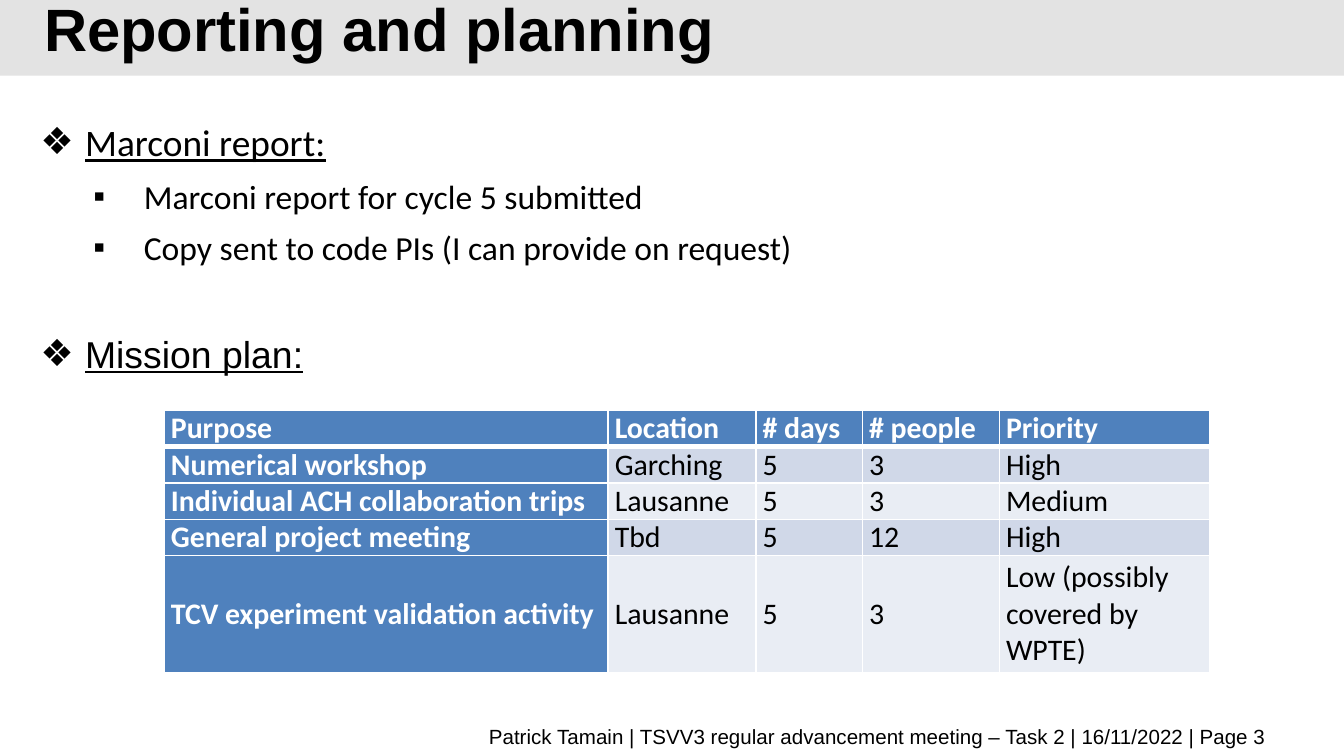
from lxml import etree
from pptx import Presentation
from pptx import util as u
from pptx.dml.color import RGBColor
from pptx.enum import shapes, text
from pptx.oxml.ns import qn

COLORS = {
    "black": "000000", "white": "FFFFFF", "banner": "E3E3E3",
    "blue": "4F81BD", "band_dark": "D0D8E8", "band_light": "E9EDF4",
}
BULLETS = {1: ("❖", 24, 20), 2: ("▪", 55.5, 18)}
POINTS = [
    (1, "Marconi report:", "Calibri", 0),
    (2, "Marconi report for cycle 5 submitted", "Calibri", 6),
    (2, "Copy sent to code PIs (I can provide on request)", "Calibri", 6),
    (1, "Mission plan:", "Arial", 34),
]
MISSIONS = [
    ("Purpose", "Location", "# days", "# people", "Priority"),
    ("Numerical workshop", "Garching", "5", "3", "High"),
    ("Individual ACH collaboration trips", "Lausanne", "5", "3", "Medium"),
    ("General project meeting", "Tbd", "5", "12", "High"),
    ("TCV experiment validation activity", "Lausanne", "5", "3",
     "Low (possibly covered by WPTE)"),
]
COL_WIDTHS = [237.8, 79.2, 57, 73.4, 113]
ROW_HEIGHTS = [19.5] * 4 + [62.5]


def rgb(name):
    return RGBColor.from_string(COLORS[name])


class Deck:
    def __init__(self, width, height):
        self.prs = Presentation()
        self.prs.slide_width, self.prs.slide_height = u.Pt(width), u.Pt(height)
        self.s = self.prs.slides.add_slide(self.prs.slide_layouts[6])

    def rect(self, box, color):
        sp = self.s.shapes.add_shape(shapes.MSO_SHAPE.RECTANGLE, *map(u.Pt, box))
        sp.shadow.inherit = False
        sp.fill.solid()
        sp.fill.fore_color.rgb = rgb(color)
        sp.line.fill.background()

    def run(self, p, words, size, font="Arial", color="black", bold=False, underline=False):
        r = p.add_run()
        r.text = words
        r.font.size, r.font.name = u.Pt(size), font
        r.font.bold, r.font.underline = bold, underline
        r.font.color.rgb = rgb(color)

    def frame(self, box, anchor):
        tf = self.s.shapes.add_textbox(*map(u.Pt, box)).text_frame
        tf.word_wrap = True
        tf.vertical_anchor = anchor
        return tf

    def label(self, box, words, size, align, bold=False, leading=None):
        p = self.frame(box, text.MSO_ANCHOR.MIDDLE).paragraphs[0]
        p.alignment = align
        if leading:
            p.line_spacing = u.Pt(leading)
        self.run(p, words, size, bold=bold)

    def bullets(self, box, points):
        tf = self.frame(box, text.MSO_ANCHOR.TOP)
        for i, (level, words, font, before) in enumerate(points):
            p = tf.add_paragraph() if i else tf.paragraphs[0]
            char, margin, size = BULLETS[level]
            p.level = level - 1
            pPr = p._p.get_or_add_pPr()
            pPr.set("marL", str(u.Pt(margin)))
            pPr.set("indent", str(u.Pt(-27)))
            clr = etree.SubElement(pPr, qn("a:buClr"))
            etree.SubElement(clr, qn("a:srgbClr"), val=COLORS["black"])
            etree.SubElement(pPr, qn("a:buFont"), typeface="Arial")
            etree.SubElement(pPr, qn("a:buChar"), char=char)
            if before:
                p.space_before = u.Pt(before)
            self.run(p, words, size, font, underline=level == 1)

    def borders(self, cell, widths):
        tcPr = cell._tc.get_or_add_tcPr()
        for i, (side, width) in enumerate(zip("LRTB", widths)):
            ln = etree.Element(qn(f"a:ln{side}"), w=str(u.Pt(width)))
            fill = etree.SubElement(ln, qn("a:solidFill"))
            etree.SubElement(fill, qn("a:srgbClr"), val=COLORS["white"])
            tcPr.insert(i, ln)

    def table(self, left, top, rows, widths, heights, size):
        box = map(u.Pt, (left, top, sum(widths), sum(heights)))
        table = self.s.shapes.add_table(len(rows), len(widths), *box).table
        for col, width in zip(table.columns, widths):
            col.width = u.Pt(width)
        for row, height in zip(table.rows, heights):
            row.height = u.Pt(height)
        for i, row in enumerate(rows):
            for j, words in enumerate(row):
                heading = i == 0 or j == 0
                band = "band_dark" if i % 2 else "band_light"
                cell = table.cell(i, j)
                cell.fill.solid()
                cell.fill.fore_color.rgb = rgb("blue" if heading else band)
                cell.margin_left = cell.margin_right = u.Pt(3.6)
                cell.margin_top = cell.margin_bottom = 0
                cell.vertical_anchor = text.MSO_ANCHOR.MIDDLE
                self.borders(cell, (1, 1, 3 if i == 1 else 1, 3 if i == 0 else 1))
                self.run(cell.text_frame.paragraphs[0], words, size, "Calibri",
                         "white" if heading else "black", heading)


def main():
    deck = Deck(720, 405)
    deck.rect((0, 0, 720, 40.5), "banner")
    deck.label((16.5, 4.5, 621.5, 27.5), "Reporting and planning", 32,
               text.PP_ALIGN.LEFT, bold=True, leading=32)
    deck.bullets((14.5, 60.5, 692, 306), POINTS)
    deck.label((36.5, 386.5, 649, 16),
               "Patrick Tamain | TSVV3 regular advancement meeting – Task 2 | 16/11/2022 | Page 3",
               11, text.PP_ALIGN.RIGHT)
    deck.table(88, 219.8, MISSIONS, COL_WIDTHS, ROW_HEIGHTS, 16)
    deck.prs.save("out.pptx")


if __name__ == "__main__":
    main()
